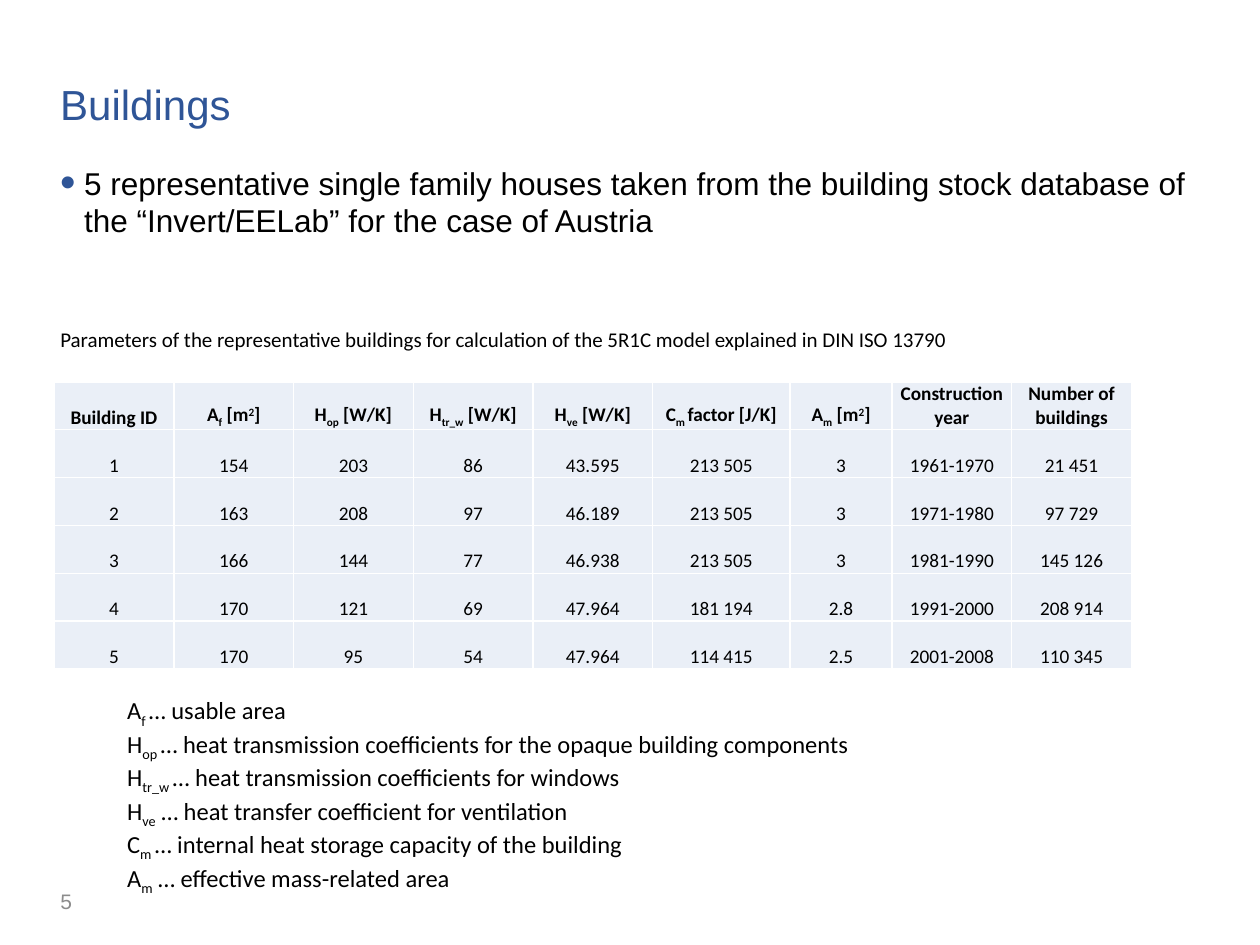
from lxml.etree import SubElement
from pptx import Presentation
from pptx.dml.color import RGBColor
from pptx.enum.text import MSO_ANCHOR, PP_ALIGN
from pptx.oxml.ns import qn
from pptx.util import Inches, Pt

BLUE, BLACK, GRAY, WHITE, CELL_FILL = "2F5597", "000000", "8C8C8C", "FFFFFF", "EAEFF7"

# Rich text is a tuple of pieces: normal, subscript, normal, superscript, normal
BASELINES = (0, -25, 0, 30, 0)

TITLE = "Buildings"
STATEMENT = ("5 representative single family houses taken from the building stock "
             "database of the “Invert/EELab” for the case of Austria")
CAPTION = ("Parameters of the representative buildings for calculation of the "
           "5R1C model explained in DIN ISO 13790")
PAGE_NUMBER = "5"

HEADER = [
    ("Building ID",),
    ("A", "f", " [m", "2", "]"),
    ("H", "op", " [W/K]"),
    ("H", "tr_w", " [W/K]"),
    ("H", "ve", " [W/K]"),
    ("C", "m ", "factor [J/K]"),
    ("A", "m", " [m", "2", "]"),
    ("Construction year",),
    ("Number of buildings",),
]
BUILDINGS = [
    ("1", "154", "203", "86", "43.595", "213 505", "3", "1961-1970", "21 451"),
    ("2", "163", "208", "97", "46.189", "213 505", "3", "1971-1980", "97 729"),
    ("3", "166", "144", "77", "46.938", "213 505", "3", "1981-1990", "145 126"),
    ("4", "170", "121", "69", "47.964", "181 194", "2.8", "1991-2000", "208 914"),
    ("5", "170", "95", "54", "47.964", "114 415", "2.5", "2001-2008", "110 345"),
]
COLUMN_WIDTHS = [0.95] * 5 + [1.09, 0.81, 0.95, 0.95]
ROW_HEIGHT = 0.38

LEGEND = [
    ("A", "f ", "… usable area"),
    ("H", "op ", "… heat transmission coefficients for the opaque building components"),
    ("H", "tr_w ", "… heat transmission coefficients for windows"),
    ("H", "ve", " … heat transfer coefficient for ventilation"),
    ("C", "m ", "… internal heat storage capacity of the building"),
    ("A", "m", " … effective mass-related area"),
]


def color(value):
    return RGBColor.from_string(value)


def write(paragraph, pieces, font_name, size, text_color=BLACK, bold=False):
    """Add the pieces as runs, alternating normal, subscript and superscript."""
    font_values = {"name": font_name, "size": Pt(size), "bold": bold}
    for piece, baseline in zip(pieces, BASELINES):
        run = paragraph.add_run()
        run.text = piece
        for name, value in font_values.items():
            setattr(run.font, name, value)
        run.font.color.rgb = color(text_color)
        if baseline:
            run.font._element.set("baseline", str(baseline * 1000))


def add_text(slide, box, lines, *font, **frame_values):
    text_box = slide.shapes.add_textbox(*map(Inches, box))
    frame = text_box.text_frame
    for name, value in {"word_wrap": True, **frame_values}.items():
        setattr(frame, name, value)
    for index, pieces in enumerate(lines):
        paragraph = frame.add_paragraph() if index else frame.paragraphs[0]
        write(paragraph, pieces, *font)
    return frame.paragraphs[0]


def add_bullet(paragraph):
    properties = paragraph._p.get_or_add_pPr()
    indent = Inches(0.19)
    properties.set("marL", str(indent))
    properties.set("indent", str(-indent))
    bullet_color = SubElement(properties, qn("a:buClr"))
    SubElement(bullet_color, qn("a:srgbClr"), val=BLUE)
    SubElement(properties, qn("a:buSzPct"), val="140000")
    SubElement(properties, qn("a:buFont"), typeface="Arial")
    SubElement(properties, qn("a:buChar"), char="•")


def format_cell(cell):
    """Set borders, fill, margins and anchor; borders must precede the fill."""
    properties = cell._tc.get_or_add_tcPr()
    for side in ("lnL", "lnR", "lnT", "lnB"):
        line = SubElement(properties, qn(f"a:{side}"), w=str(Pt(1)))
        SubElement(SubElement(line, qn("a:solidFill")), qn("a:srgbClr"), val=WHITE)
    cell.fill.solid()
    cell.fill.fore_color.rgb = color(CELL_FILL)
    for side in ("left", "right", "top", "bottom"):
        setattr(cell, f"margin_{side}", 0)
    cell.vertical_anchor = MSO_ANCHOR.BOTTOM


def add_building_table(slide):
    rows = [HEADER] + [[(value,) for value in building] for building in BUILDINGS]
    table = slide.shapes.add_table(
        len(rows), len(HEADER), Inches(0.43), Inches(3.03),
        Inches(sum(COLUMN_WIDTHS)), Inches(ROW_HEIGHT * len(rows))).table
    table.first_row = table.horz_banding = False
    for column, width in zip(table.columns, COLUMN_WIDTHS):
        column.width = Inches(width)
    for row_index, row in enumerate(rows):
        table.rows[row_index].height = Inches(ROW_HEIGHT)
        for column_index, pieces in enumerate(row):
            cell = table.cell(row_index, column_index)
            format_cell(cell)
            paragraph = cell.text_frame.paragraphs[0]
            paragraph.alignment = PP_ALIGN.CENTER
            write(paragraph, pieces, "Calibri", 11, BLACK, row_index == 0)


def main():
    presentation = Presentation()
    presentation.slide_width, presentation.slide_height = Inches(10), Inches(7.5)
    slide = presentation.slides.add_slide(presentation.slide_layouts[6])

    statement = add_text(slide, (0.38, 1.25, 9.24, 1), [(STATEMENT,)], "Arial", 18)
    add_bullet(statement)
    add_building_table(slide)
    add_text(slide, (0.38, 6.95, 2.25, 0.4), [(PAGE_NUMBER,)], "Arial", 12, GRAY,
             vertical_anchor=MSO_ANCHOR.MIDDLE)
    title = add_text(slide, (0.38, 0.62, 9.24, 0.74), [(TITLE,)], "Arial", 24, BLUE)
    title.line_spacing = 0.9
    add_text(slide, (0.38, 2.54, 7.32, 0.61), [(CAPTION,)], "Calibri", 12)
    add_text(slide, (0.91, 5.47, 8.61, 1.51), LEGEND, "Calibri", 14)

    presentation.save("out.pptx")


if __name__ == "__main__":
    main()
